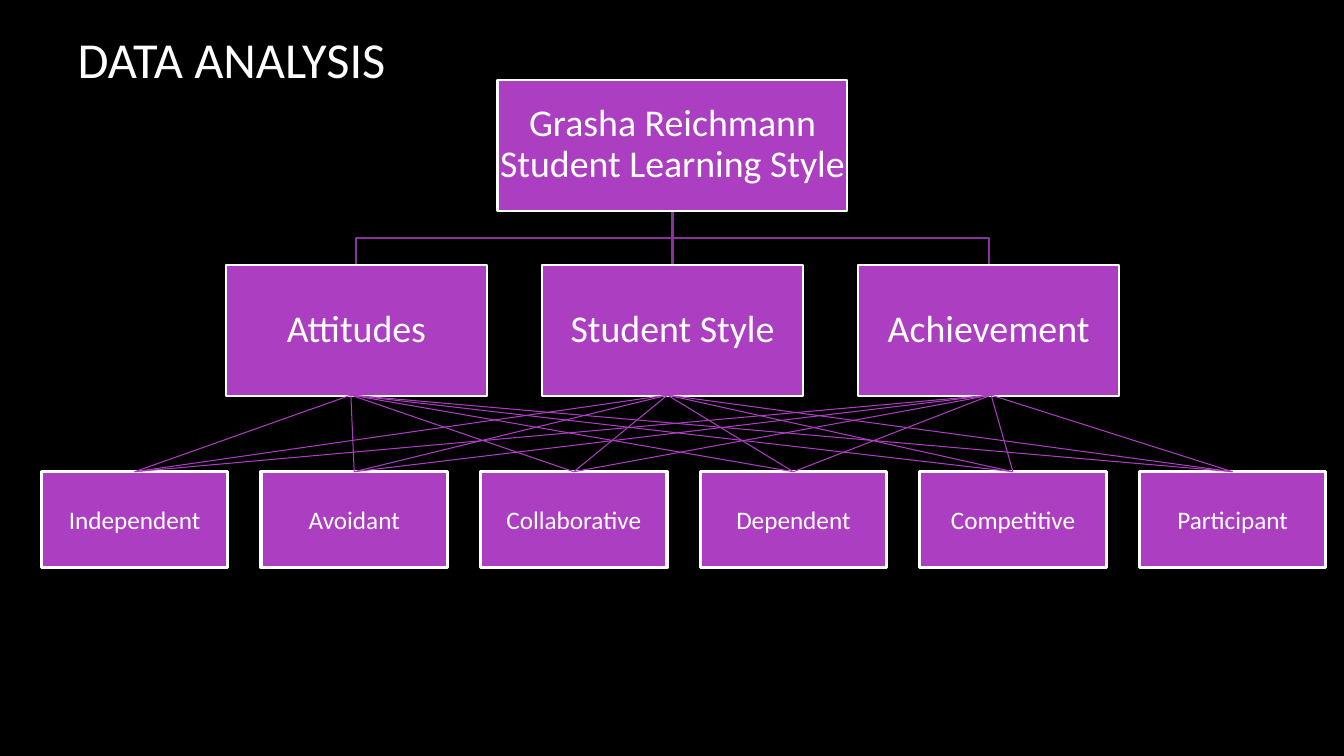
import dataclasses

import pptx
import pptx.dml.color
import pptx.enum.shapes
import pptx.enum.text
import pptx.oxml
import pptx.oxml.ns
import pptx.util

Inches = pptx.util.Inches
Pt = pptx.util.Pt
RGB = pptx.dml.color.RGBColor.from_string


@dataclasses.dataclass(frozen=True)
class Theme:
    font: str = "Calibri"
    back: str = "000000"
    text: str = "FFFFFF"
    box: str = "AC3EC1"
    branch: str = "8A329B"
    title_size: float = 36
    tree_size: float = 27
    style_size: float = 18
    tree_line: float = 1.5
    style_line: float = 2.25
    fan_line: float = 0.75


THEME = Theme()
TREE_ROOT = "Grasha Reichmann Student Learning Style"
VARIABLES = ["Attitudes", "Student Style", "Achievement"]
STYLES = ["Independent", "Avoidant", "Collaborative", "Dependent", "Competitive", "Participant"]


def add_text(tf, text, size, align):
    tf.word_wrap = True
    tf.vertical_anchor = pptx.enum.text.MSO_ANCHOR.MIDDLE
    p = tf.paragraphs[0]
    p.alignment = align
    r = p.add_run()
    r.text = text
    r.font.name = THEME.font
    r.font.size = Pt(size)
    r.font.color.rgb = RGB(THEME.text)
    return p


def add_box(slide, text, left, top, width, height, size, line):
    sp = slide.shapes.add_shape(
        pptx.enum.shapes.MSO_SHAPE.RECTANGLE,
        Inches(left), Inches(top), Inches(width), Inches(height))
    sp.shadow.inherit = False
    sp.fill.solid()
    sp.fill.fore_color.rgb = RGB(THEME.box)
    sp.line.color.rgb = RGB(THEME.text)
    sp.line.width = Pt(line)
    add_text(sp.text_frame, text, size, pptx.enum.text.PP_ALIGN.CENTER)
    return sp


def add_tree_box(slide, text, left, top, width, height):
    tf = add_box(slide, text, left, top, width, height, THEME.tree_size, THEME.tree_line).text_frame
    tf.margin_left = tf.margin_right = tf.margin_top = tf.margin_bottom = Inches(0.02)
    tf.paragraphs[0].line_spacing = 0.9


def add_line(slide, x1, y1, x2, y2, color, width):
    cx = slide.shapes.add_connector(
        pptx.enum.shapes.MSO_CONNECTOR.STRAIGHT,
        Inches(x1), Inches(y1), Inches(x2), Inches(y2))
    cx.line.color.rgb = RGB(color)
    cx.line.width = Pt(width)
    sp_pr = cx.element.find(pptx.oxml.ns.qn("p:spPr"))
    sp_pr.append(pptx.oxml.parse_xml(
        '<a:effectLst xmlns:a="http://schemas.openxmlformats.org/drawingml/2006/main"/>'))


def add_elbow(slide, x1, y1, x2, y2):
    mid = (y1 + y2) / 2
    points = [(Inches(x), Inches(y)) for x, y in ((x1, mid), (x2, mid), (x2, y2))]
    fb = slide.shapes.build_freeform(Inches(x1), Inches(y1))
    fb.add_line_segments(points, close=False)
    sp = fb.convert_to_shape()
    sp.shadow.inherit = False
    sp.fill.background()
    sp.line.color.rgb = RGB(THEME.branch)
    sp.line.width = Pt(THEME.tree_line)


def add_title(slide, left, top, width, height):
    sp = slide.shapes.title
    sp.left, sp.top, sp.width, sp.height = map(Inches, (left, top, width, height))
    add_text(sp.text_frame, "DATA ANALYSIS", THEME.title_size, pptx.enum.text.PP_ALIGN.LEFT)


def add_tree(slide, left, top, width, height):
    root_w, box_w, box_h = 3.47, 2.59, 1.3
    center = left + width / 2
    step = (width - box_w) / (len(VARIABLES) - 1)
    row_top = top + height - box_h
    for i in range(len(VARIABLES)):
        x = left + i * step + box_w / 2
        if abs(x - center) < 0.01:
            add_line(slide, center, top + box_h, center, row_top, THEME.branch, THEME.tree_line)
        else:
            add_elbow(slide, center, top + box_h, x, row_top)
    add_tree_box(slide, TREE_ROOT, center - root_w / 2, top, root_w, box_h)
    for i, name in enumerate(VARIABLES):
        add_tree_box(slide, name, left + i * step, row_top, box_w, box_h)


def add_styles(slide, left, top, width, height):
    box_w, fan_h = 1.85, 0.76
    fan_starts = [3.07, 6.21, 9.42]
    step = (width - box_w) / (len(STYLES) - 1)
    for i, name in enumerate(STYLES):
        add_box(slide, name, left + i * step, top + fan_h, box_w, height - fan_h,
                THEME.style_size, THEME.style_line)
    for start in fan_starts:
        for i in range(len(STYLES)):
            add_line(slide, left + start, top, left + i * step + box_w / 2, top + fan_h,
                     THEME.box, THEME.fan_line)


def main():
    prs = pptx.Presentation()
    prs.slide_width, prs.slide_height = Inches(13.33), Inches(7.5)
    slide = prs.slides.add_slide(prs.slide_layouts[5])
    slide.background.fill.solid()
    slide.background.fill.fore_color.rgb = RGB(THEME.back)
    add_title(slide, 0.67, 0.19, 11.08, 0.78)
    add_tree(slide, 2.24, 0.79, 8.86, 3.14)
    add_styles(slide, 0.41, 3.92, 12.74, 1.71)
    prs.save("out.pptx")


if __name__ == "__main__":
    main()
